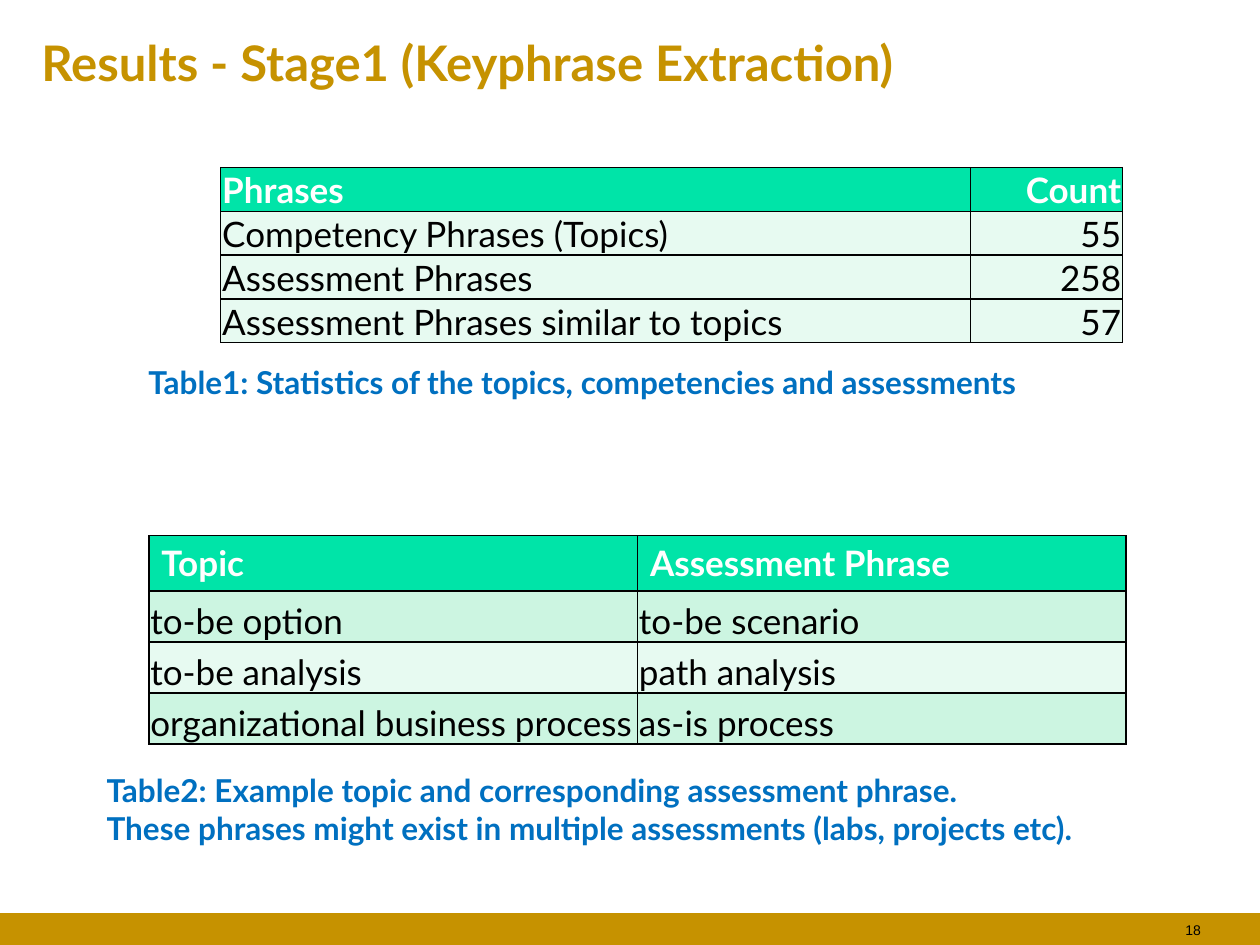
from lxml import etree
from pptx import Presentation
from pptx.dml.color import RGBColor
from pptx.enum.shapes import MSO_SHAPE
from pptx.enum.text import MSO_ANCHOR, PP_ALIGN
from pptx.oxml.ns import qn
from pptx.util import Cm, Pt

RECTANGLE = MSO_SHAPE.RECTANGLE
TOP, MIDDLE, BOTTOM = MSO_ANCHOR.TOP, MSO_ANCHOR.MIDDLE, MSO_ANCHOR.BOTTOM
LEFT, RIGHT = PP_ALIGN.LEFT, PP_ALIGN.RIGHT

GOLD = RGBColor(0xC6, 0x92, 0x00)
GREEN = RGBColor(0x00, 0xE4, 0xA8)
MINT = RGBColor(0xCC, 0xF5, 0xE1)
PALE = RGBColor(0xE7, 0xFA, 0xF1)
BLUE = RGBColor(0x00, 0x70, 0xC0)
BLACK = RGBColor(0, 0, 0)
WHITE = RGBColor(0xFF, 0xFF, 0xFF)

TITLE = "Results - Stage1 (Keyphrase Extraction)"
PAGE = "18"

# Lengths are in centimetres; bands are the body row fills, used in turn.
TABLES = [
    dict(
        at=(4.45, 3.38), cols=(5.95 * 2.54 / 1, 1.21 * 2.54), heights=(0.88,) * 4,
        aligns=(LEFT, RIGHT), bands=(PALE,), tight_header=True,
        rows=[
            ("Phrases", "Count"),
            ("Competency Phrases (Topics)", "55"),
            ("Assessment Phrases", "258"),
            ("Assessment Phrases similar to topics", "57"),
        ],
    ),
    dict(
        at=(3.0, 10.8), cols=(9.85, 9.85), heights=(1.11, 1.03, 1.03, 1.03),
        aligns=(LEFT, LEFT), bands=(MINT, PALE), tight_header=False,
        rows=[
            ("Topic", "Assessment Phrase"),
            ("to-be option", "to-be scenario"),
            ("to-be analysis", "path analysis"),
            ("organizational business process", "as-is process"),
        ],
    ),
]
TABLES[0]["cols"] = (15.11, 3.07)

CAPTIONS = [
    ((2.74, 7.19, 20.73, 1.02),
     ["Table1: Statistics of the topics, competencies and assessments"]),
    ((1.9, 15.42, 23.7, 1.8),
     ["Table2: Example topic and corresponding assessment phrase.",
      "These phrases might exist in multiple assessments (labs, projects etc)."]),
]


def style(p, size, color, bold=False, name="Lato", align=LEFT):
    p.alignment = align
    f = p.font
    f.name, f.size, f.bold = name, Pt(size), bold
    f.color.rgb = color


def add_text(slide, box, lines, anchor=TOP, **font):
    tf = slide.shapes.add_textbox(*map(Cm, box)).text_frame
    tf.word_wrap = True
    tf.vertical_anchor = anchor
    tf.text = "\n".join(lines)
    for p in tf.paragraphs:
        style(p, **font)


def add_borders(cell):
    tc_pr = cell._tc.get_or_add_tcPr()
    for side in ("lnL", "lnR", "lnT", "lnB"):
        ln = etree.SubElement(tc_pr, qn(f"a:{side}"), w=str(Pt(1)))
        fill = etree.SubElement(ln, qn("a:solidFill"))
        etree.SubElement(fill, qn("a:srgbClr"), val=str(BLACK))


def add_table(slide, at, cols, heights, aligns, bands, tight_header, rows):
    size = (sum(cols), sum(heights))
    table = slide.shapes.add_table(len(rows), len(cols), *map(Cm, at + size)).table
    for column, width in zip(table.columns, cols):
        column.width = Cm(width)
    for i, (row, height, texts) in enumerate(zip(table.rows, heights, rows)):
        row.height = Cm(height)
        header = i == 0
        for cell, text, align in zip(row.cells, texts, aligns):
            cell.text = text
            style(cell.text_frame.paragraphs[0], 20, WHITE if header else BLACK,
                  bold=header, align=align)
            if tight_header or not header:
                cell.vertical_anchor = BOTTOM
                cell.margin_left = cell.margin_right = cell.margin_top = Cm(0.03)
                cell.margin_bottom = 0
            add_borders(cell)
            cell.fill.solid()
            cell.fill.fore_color.rgb = GREEN if header else bands[(i - 1) % len(bands)]


def main():
    prs = Presentation()
    prs.slide_width, prs.slide_height = Cm(25.4), Cm(19.05)
    slide = prs.slides.add_slide(prs.slide_layouts[5])

    bar = slide.shapes.add_shape(RECTANGLE, 0, Cm(18.41), prs.slide_width, Cm(0.64))
    bar.shadow.inherit = False
    bar.fill.solid()
    bar.fill.fore_color.rgb = GOLD
    bar.line.fill.background()

    title = slide.shapes.title
    title.left, title.top, title.width, title.height = map(Cm, (0.58, 0.53, 24.23, 1.45))
    tf = title.text_frame
    tf.text = TITLE
    tf.vertical_anchor = MIDDLE
    style(tf.paragraphs[0], 28, GOLD, bold=True)

    for table in TABLES:
        add_table(slide, **table)
    for box, lines in CAPTIONS:
        add_text(slide, box, lines, size=18, color=BLUE, bold=True)
    add_text(slide, (23.47, 18.44, 0.99, 0.61), [PAGE], anchor=MIDDLE,
             size=8, color=BLACK, name="Arial", align=RIGHT)

    prs.save("out.pptx")


if __name__ == "__main__":
    main()
